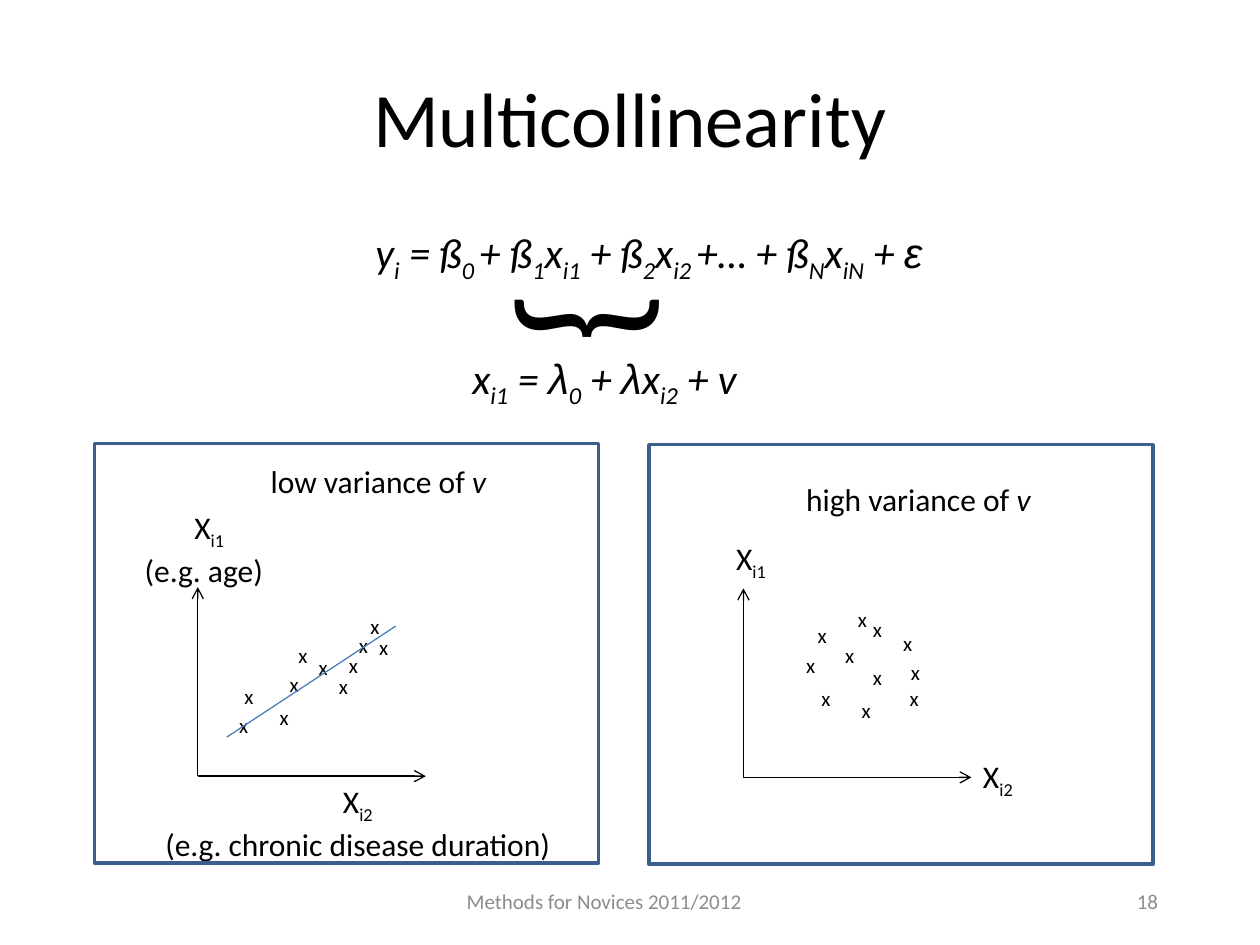
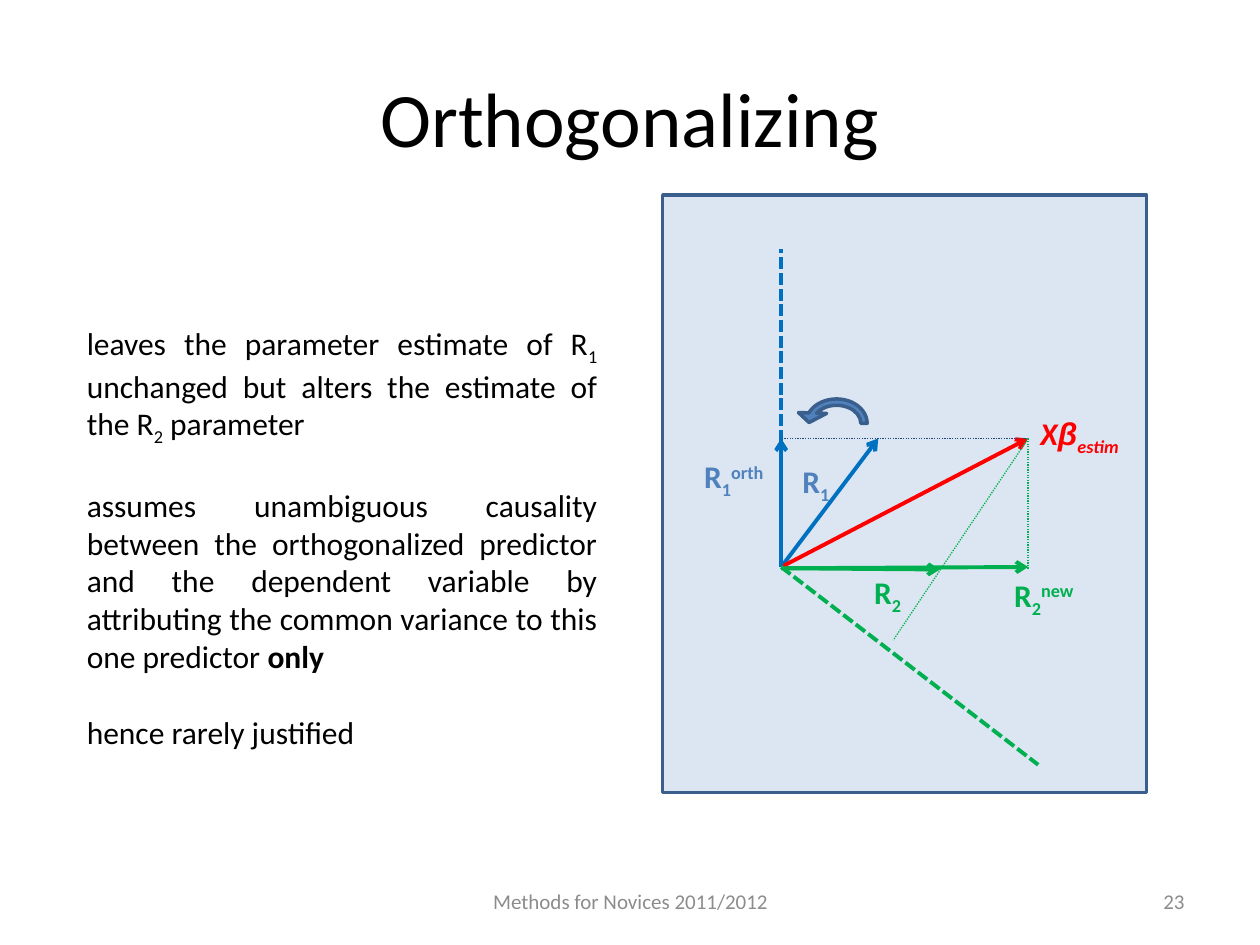
from dataclasses import dataclass

import lxml.etree
import pptx
import pptx.dml.color
import pptx.enum.dml
import pptx.enum.shapes
import pptx.enum.text
import pptx.oxml.ns
import pptx.slide
import pptx.util

Inches = pptx.util.Inches
Pt = pptx.util.Pt
Align = pptx.enum.text.PP_ALIGN
Dash = pptx.enum.dml.MSO_LINE
Preset = pptx.enum.shapes.MSO_SHAPE

# Shared look
BLACK, GREY, RED, GREEN = "000000", "8C8C8C", "FF0000", "00B050"
VECTOR_BLUE, LABEL_BLUE, TREND_BLUE = "0070C0", "4F81BD", "4B7EBC"
FRAME_BLUE, PANEL_BLUE, GUIDE_BLUE = "3A5F8C", "DCE6F2", "1F497D"
FONT, GREEK_FONT, GREEK = "Calibri", "Arial", "βελ"
FOOTER = "Methods for Novices 2011/2012"
BASELINES = {"_": "-25000", "^": "30000"}


@dataclass
class Line:
    """A paragraph; | splits runs, which may start with _ ^ (baseline), * (bold), / (italic)."""
    text: str
    align: Align = Align.LEFT
    before: float = 0
    indent: float = 0


@dataclass
class Label:
    left: float
    top: float
    width: float
    height: float
    lines: list[Line]
    size: float = 18
    color: str = BLACK
    bold: bool = False
    italic: bool = False
    wrap: bool = False
    grow: bool = True
    middle: bool = False
    rotation: float = 0


@dataclass
class Stroke:
    start: tuple[float, float]
    end: tuple[float, float]
    color: str = BLACK
    weight: float = 0.75
    arrow: bool = False
    dash: Dash | None = None


@dataclass
class Plot:
    origin: tuple[float, float]
    points: list[tuple[float, float]]


def rgb(color: str) -> pptx.dml.color.RGBColor:
    return pptx.dml.color.RGBColor.from_string(color)


def add_run(paragraph, token: str) -> None:
    mark = token[0] if len(token) > 1 and token[0] in "_^*/" else ""
    run = paragraph.add_run()
    run.text = token[len(mark):]
    if mark in BASELINES:
        run.font._element.set("baseline", BASELINES[mark])
    elif mark == "*":
        run.font.bold = True
    elif mark == "/":
        run.font.italic = True
    if run.text in GREEK:
        run.font.name = GREEK_FONT


def add_label(slide: pptx.slide.Slide, label: Label):
    box = slide.shapes.add_textbox(Inches(label.left), Inches(label.top),
                                   Inches(label.width), Inches(label.height))
    box.rotation = label.rotation
    frame = box.text_frame
    frame.word_wrap = label.wrap
    if label.grow:
        frame.auto_size = pptx.enum.text.MSO_AUTO_SIZE.SHAPE_TO_FIT_TEXT
    if label.middle:
        frame.vertical_anchor = pptx.enum.text.MSO_ANCHOR.MIDDLE
    for index, line in enumerate(label.lines):
        paragraph = frame.add_paragraph() if index else frame.paragraphs[0]
        paragraph.alignment = line.align
        paragraph.space_before = Pt(line.before)
        if line.indent:
            properties = paragraph._p.get_or_add_pPr()
            properties.set("marL", str(Inches(line.indent)))
            properties.set("indent", "0")
        font = paragraph.font
        font.name, font.size = FONT, Pt(label.size)
        font.bold, font.italic = label.bold, label.italic
        font.color.rgb = rgb(label.color)
        for token in line.text.split("|"):
            add_run(paragraph, token)
    return box


def add_stroke(slide: pptx.slide.Slide, stroke: Stroke) -> None:
    connector = slide.shapes.add_connector(
        pptx.enum.shapes.MSO_CONNECTOR.STRAIGHT,
        *(Inches(value) for value in stroke.start + stroke.end))
    connector.line.color.rgb = rgb(stroke.color)
    connector.line.width = Pt(stroke.weight)
    if stroke.dash is not None:
        connector.line.dash_style = stroke.dash
    qualified = pptx.oxml.ns.qn
    if stroke.arrow:
        lxml.etree.SubElement(connector.line._get_or_add_ln(), qualified("a:tailEnd"), type="arrow")
    lxml.etree.SubElement(connector.element.spPr, qualified("a:effectLst"))


def add_shape(slide: pptx.slide.Slide, preset: Preset, left: float, top: float,
              width: float, height: float, fill: str | None = None):
    shape = slide.shapes.add_shape(preset, Inches(left), Inches(top), Inches(width), Inches(height))
    shape.shadow.inherit = False
    if fill:
        shape.fill.solid()
        shape.fill.fore_color.rgb = rgb(fill)
    else:
        shape.fill.background()
    shape.line.color.rgb = rgb(FRAME_BLUE)
    shape.line.width = Pt(2)
    return shape


def add_base_slide(presentation, title: str, number: int, footer_left: float) -> pptx.slide.Slide:
    """Blank slide with the shared title, footer and page number."""
    slide = presentation.slides.add_slide(presentation.slide_layouts[6])
    add_label(slide, Label(0.5, 0.3, 9, 1.25, [Line(title, Align.CENTER)], size=44,
                           wrap=True, grow=False, middle=True))
    for offset, width, text, align in ((0, 3.17, FOOTER, Align.CENTER),
                                       (3.75, 2.33, str(number), Align.RIGHT)):
        add_label(slide, Label(footer_left + offset, 6.95, width, 0.4, [Line(text, align)], size=12,
                               color=GREY, wrap=True, grow=False, middle=True))
    return slide


def add_plot(slide: pptx.slide.Slide, plot: Plot) -> None:
    """Two axes and a scatter of small x marks."""
    x, y = plot.origin
    for end in ((x, y - 1.5), (x + 1.81, y)):
        add_stroke(slide, Stroke(plot.origin, end, arrow=True))
    for left, top in plot.points:
        mark = add_label(slide, Label(left, top, 0.31, 0.4, [Line("x| ")], size=12, wrap=True))
        mark.text_frame.paragraphs[0].runs[1].font.size = Pt(18)


def build_multicollinearity(presentation) -> None:
    slide = add_base_slide(presentation, "Multicollinearity", 18, 3.21)

    # Equations joined by a brace
    add_label(slide, Label(0.65, 1.75, 9, 4.95, [
        Line("y|_i| = ß|_0 |+ ß|_1|x|_i1| + ß|_2|x|_i2 |+… + ß|_N|x|_iN| + |ε", Align.CENTER, before=4.8),
        Line("x|_i1| = |λ|_0| + |λ|x|_i2| + v", before=38.9, indent=3),
    ], size=24, italic=True, wrap=True, grow=False))
    add_label(slide, Label(4.21, 1.65, 0.63, 1.72, [Line("{")], size=96, rotation=270))

    # Scatter plots
    low_variance = Plot((1.57, 6.16), [
        (1.84, 5.29), (2.12, 5.46), (2.27, 4.97), (2.59, 5.21), (2.2, 5.2), (2.67, 5.05),
        (2.84, 4.74), (2.75, 4.89), (2.91, 4.9), (2.43, 5.06), (1.8, 5.52)])
    high_variance = Plot((5.9, 6.17), [
        (6.3, 5.05), (6.74, 5.4), (6.61, 4.97), (7.13, 5.1), (6.42, 5.31), (6.83, 5.14),
        (7.12, 5.31), (6.83, 4.76), (6.71, 4.68), (7.07, 4.87), (6.39, 4.81)])
    for plot in (low_variance, high_variance):
        add_plot(slide, plot)
    add_stroke(slide, Stroke((1.8, 5.85), (3.14, 4.97), TREND_BLUE))

    # Plot headings and axis names
    for label in (
        Label(2.05, 3.62, 1.93, 0.4, [Line("low variance of |/v")]),
        Label(6.3, 3.76, 2.01, 0.4, [Line("high variance of |/v")]),
        Label(1.05, 3.98, 1.22, 0.71, [Line("X|_i1", Align.CENTER), Line("(e.g. age)")], wrap=True),
        Label(1.19, 6.16, 3.3, 0.71, [Line("X|_i2", Align.CENTER),
                                      Line("(e.g. chronic disease duration)", Align.CENTER)]),
        Label(5.35, 4.23, 1.22, 0.4, [Line("X|_i1", Align.CENTER)], wrap=True),
        Label(7.31, 5.96, 1.22, 0.4, [Line("X|_i2", Align.CENTER)], wrap=True),
    ):
        add_label(slide, label)

    # Frames
    for left, top in ((0.75, 3.52), (5.15, 3.53)):
        add_shape(slide, Preset.RECTANGLE, left, top, 4, 3.33)


def build_orthogonalizing(presentation) -> None:
    slide = add_base_slide(presentation, "Orthogonalizing", 23, 3.42)
    add_shape(slide, Preset.RECTANGLE, 5.26, 1.55, 3.84, 4.74, PANEL_BLUE)

    # Vectors, extended directions and projection guides
    origin, estimate = (6.2, 4.5), (8.16, 3.48)
    baseline_start = (6.2, 4.51)
    for stroke in (
        Stroke(origin, (6.97, 3.48), VECTOR_BLUE, 2.25, arrow=True),
        Stroke(baseline_start, (8.16, 4.5), GREEN, 2.25, arrow=True),
        Stroke(origin, estimate, RED, 2.25, arrow=True),
        Stroke(origin, (6.2, 1.98), VECTOR_BLUE, 2.25, dash=Dash.SQUARE_DOT),
        Stroke(origin, (8.24, 6.07), GREEN, 2.25, dash=Dash.SQUARE_DOT),
        Stroke(estimate, (6.2, 3.48), GUIDE_BLUE, dash=Dash.ROUND_DOT),
        Stroke(estimate, (7.09, 5.08), GREEN, dash=Dash.ROUND_DOT),
        Stroke(estimate, (8.16, 4.52), GREEN, dash=Dash.ROUND_DOT),
        Stroke(baseline_start, (7.46, 4.52), GREEN, 2.25, arrow=True),
        Stroke((6.2, 4.47), (6.2, 3.48), VECTOR_BLUE, 2.25, arrow=True),
    ):
        add_stroke(slide, stroke)

    # Vector names
    for left, top, width, text, color in (
        (8.16, 3.24, 0.86, "X|β|_estim", RED),
        (6.27, 3.62, 0.43, "R|_1", LABEL_BLUE),
        (7.95, 4.52, 0.73, "R|_2|^new", GREEN),
        (5.49, 3.58, 0.73, "R|_1|^orth", LABEL_BLUE),
        (6.84, 4.5, 0.43, "R|_2", GREEN),
    ):
        add_label(slide, Label(left, top, width, 0.4, [Line(text)], color=color,
                               bold=True, italic=color == RED))

    # Rotation arrow
    rotation_arrow = add_shape(slide, Preset.CIRCULAR_ARROW, 6.31, 3.08, 0.66, 0.56, LABEL_BLUE)
    for index, value in enumerate((0.09, 12.99, 202.04, 108, 0.2)):
        rotation_arrow.adjustments[index] = value
    rotation_arrow.element.spPr.get_or_add_xfrm().set("flipH", "1")

    # Explanation
    add_label(slide, Label(0.59, 2.52, 4.25, 3.43, [
        Line("leaves the parameter estimate of R|_1| unchanged but alters the estimate of the R|_2| parameter",
             Align.JUSTIFY),
        Line("assumes unambiguous causality between the orthogonalized predictor and the dependent "
             "variable by attributing the common variance to this one predictor |*only",
             Align.JUSTIFY, before=22),
        Line("hence rarely justified", Align.JUSTIFY, before=22),
    ], wrap=True))


def main() -> None:
    presentation = pptx.Presentation()
    presentation.slide_width, presentation.slide_height = Inches(10), Inches(7.5)
    build_multicollinearity(presentation)
    build_orthogonalizing(presentation)
    presentation.save("out.pptx")


if __name__ == "__main__":
    main()
